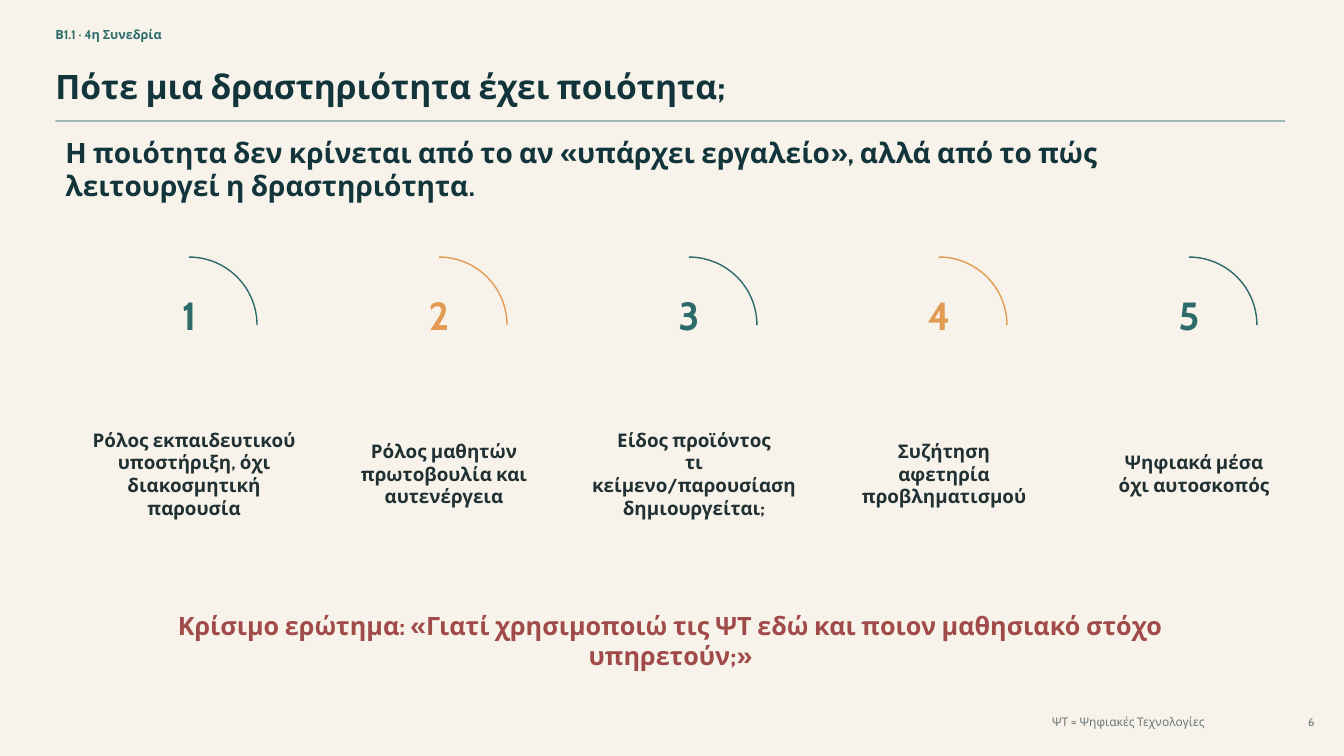
from dataclasses import dataclass

from lxml.etree import SubElement
from pptx import Presentation
from pptx.dml.color import RGBColor
from pptx.enum.shapes import MSO_CONNECTOR as Connector, MSO_SHAPE as Shape
from pptx.enum.text import MSO_ANCHOR as Anchor, PP_ALIGN as Align
from pptx.oxml.ns import qn
from pptx.util import Pt


@dataclass(frozen=True)
class Theme:
    font: str = "Cabin"
    # Colours
    background: str = "F7F3EA"
    teal: str = "2D6A6A"
    orange: str = "E39A53"
    heading: str = "12343B"
    body: str = "203033"
    question: str = "A04A4A"
    muted: str = "6B7779"
    # Type sizes
    tag_size: float = 9
    title_size: float = 24
    lead_size: float = 20
    number_size: float = 28
    label_size: float = 13.4
    question_size: float = 18
    note_size: float = 8.5
    page_size: float = 8


class SlideBuilder:
    """Draws styled elements on one slide; all lengths are in points."""

    def __init__(self, slide, theme):
        self.slide = slide
        self.theme = theme
        fill = slide.background.fill
        fill.solid()
        fill.fore_color.rgb = RGBColor.from_string(theme.background)

    def text(self, left, top, width, height, lines, size, color,
             bold=True, align=Align.LEFT):
        box = self.slide.shapes.add_textbox(Pt(left), Pt(top), Pt(width), Pt(height))
        frame = box.text_frame
        frame.word_wrap = True
        frame.vertical_anchor = Anchor.MIDDLE
        frame.margin_left = frame.margin_right = 0
        frame.margin_top = frame.margin_bottom = 0
        frame.text = lines
        for paragraph in frame.paragraphs:
            paragraph.alignment = align
            for run in paragraph.runs:
                run.font.name = self.theme.font
                run.font.size = Pt(size)
                run.font.bold = bold
                run.font.color.rgb = RGBColor.from_string(color)

    def rule(self, left, right, top, color, opacity):
        line = self.slide.shapes.add_connector(
            Connector.STRAIGHT, Pt(left), Pt(top), Pt(right), Pt(top))
        line.line.width = Pt(1)
        line.line.color.rgb = RGBColor.from_string(color)
        properties = line._element.spPr
        SubElement(properties, qn("a:effectLst"))
        solid_color = next(properties.iter(qn("a:srgbClr")))
        SubElement(solid_color, qn("a:alpha"), val=str(opacity * 1000))

    def arc(self, left, top, size, color):
        shape = self.slide.shapes.add_shape(
            Shape.ARC, Pt(left), Pt(top), Pt(size), Pt(size))
        shape.shadow.inherit = False
        shape.fill.background()
        shape.line.color.rgb = RGBColor.from_string(color)
        shape.line.width = Pt(1)

    def criterion(self, left, number, label, color):
        theme = self.theme
        self.arc(left, 183.6, 97.2, color)
        self.text(left + 25.2, 208.8, 46.8, 32.4, str(number),
                  theme.number_size, color, align=Align.CENTER)
        self.text(left - 25.2, 298.8, 154.8, 79.2, label,
                  theme.label_size, theme.body, align=Align.CENTER)


CRITERIA = [
    "Ρόλος εκπαιδευτικού\nυποστήριξη, όχι διακοσμητική παρουσία",
    "Ρόλος μαθητών\nπρωτοβουλία και αυτενέργεια",
    "Είδος προϊόντος\nτι κείμενο/παρουσίαση δημιουργείται;",
    "Συζήτηση\nαφετηρία προβληματισμού",
    "Ψηφιακά μέσα\nόχι αυτοσκοπός",
]
FIRST_LEFT = 86.4
COLUMN_STEP = 178.56


def main():
    presentation = Presentation()
    presentation.slide_width = Pt(960)
    presentation.slide_height = Pt(540)
    theme = Theme()
    slide = presentation.slides.add_slide(presentation.slide_layouts[6])
    builder = SlideBuilder(slide, theme)

    # Header
    builder.text(39.6, 15.84, 259.2, 18, "Β1.1 · 4η Συνεδρία",
                 theme.tag_size, theme.teal)
    builder.text(39.6, 41.76, 640.8, 39.6, "Πότε μια δραστηριότητα έχει ποιότητα;",
                 theme.title_size, theme.heading)
    builder.rule(39.6, 918, 86.4, theme.teal, opacity=65)

    # Lead statement
    builder.text(46.8, 104.4, 763.2, 32.4,
                 "Η ποιότητα δεν κρίνεται από το αν «υπάρχει εργαλείο», "
                 "αλλά από το πώς λειτουργεί η δραστηριότητα.",
                 theme.lead_size, theme.heading)

    # Five criteria in alternating colours
    for index, label in enumerate(CRITERIA):
        color = theme.orange if index % 2 else theme.teal
        builder.criterion(FIRST_LEFT + index * COLUMN_STEP, index + 1, label, color)

    # Key question
    builder.text(90, 442.8, 777.6, 28.8,
                 "Κρίσιμο ερώτημα: «Γιατί χρησιμοποιώ τις ΨΤ εδώ "
                 "και ποιον μαθησιακό στόχο υπηρετούν;»",
                 theme.question_size, theme.question, align=Align.CENTER)

    # Footer
    builder.text(619.2, 507.6, 241.2, 15.84, "ΨΤ = Ψηφιακές Τεχνολογίες",
                 theme.note_size, theme.muted, bold=False, align=Align.RIGHT)
    builder.text(923.04, 508.32, 15.84, 14.4, "6",
                 theme.page_size, theme.muted, bold=False, align=Align.RIGHT)

    presentation.save("out.pptx")


if __name__ == "__main__":
    main()
